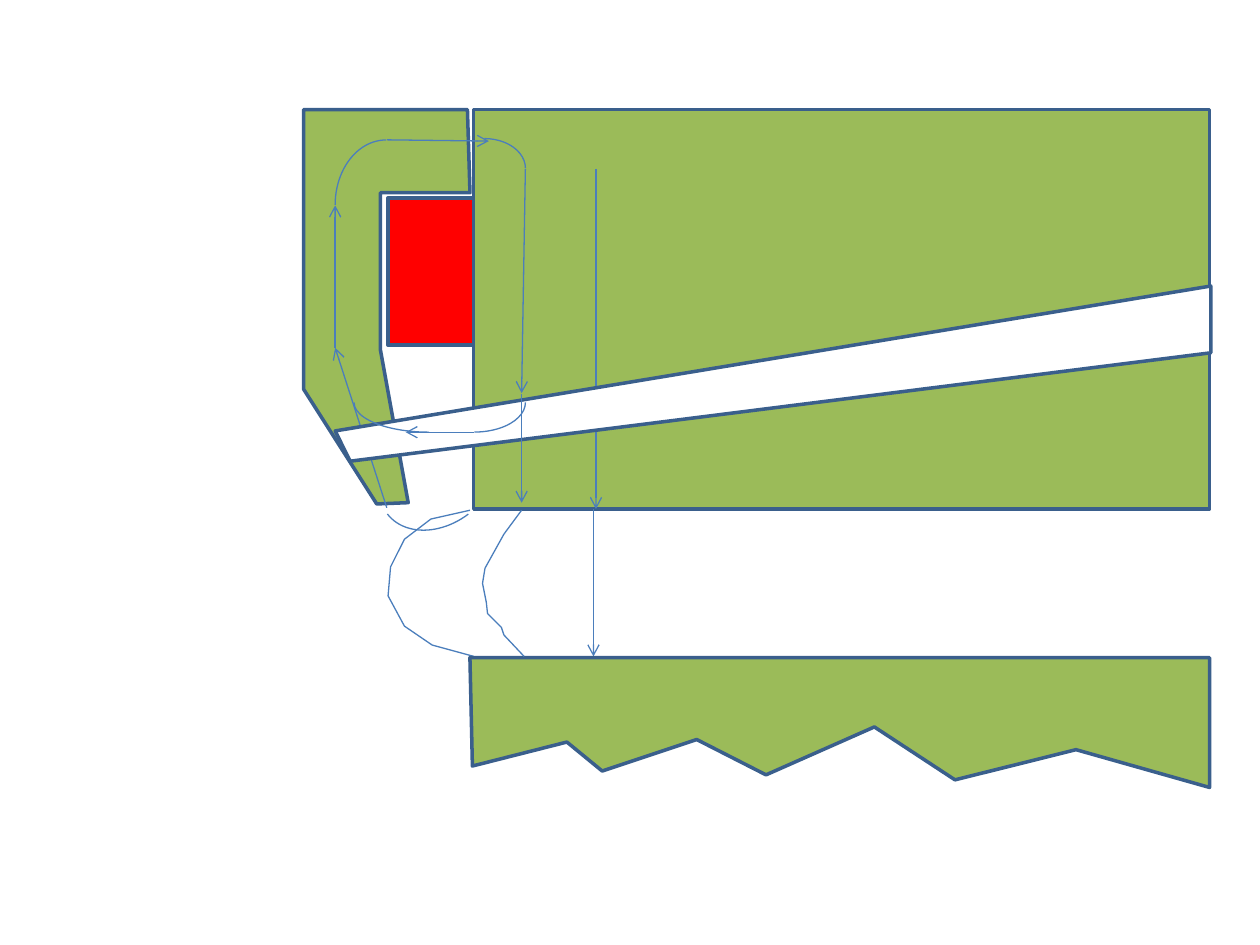
from lxml import etree
from pptx import Presentation, util as u
from pptx.dml.color import RGBColor
from pptx.enum import shapes as kinds
from pptx.oxml.ns import qn

deck = Presentation()
deck.slide_width, deck.slide_height = u.Inches(10), u.Inches(7.5)
CELL = deck.slide_width // 1000  # grid of 1000 columns by 750 rows
slide = deck.slides.add_slide(deck.slide_layouts[6])
canvas = slide.shapes

IRON, COIL, AIR = "9BBB59", "FF0000", "FFFFFF"
EDGE = {"color": "3A5F8C", "width": 2}
FLUX = {"color": "4B7EBC", "width": 0.75}


def paint(part, look, fill=None):
    """Outline a part, and fill it when a colour is given."""
    part.shadow.inherit = False
    part.line.color.rgb = RGBColor.from_string(look["color"])
    part.line.width = u.Pt(look["width"])
    if fill:
        part.fill.solid()
        part.fill.fore_color.rgb = RGBColor.from_string(fill)
    elif hasattr(part, "fill"):
        part.fill.background()


def outline(points, look, fill=None):
    """Draw a closed body when filled, otherwise an open line."""
    builder = canvas.build_freeform(*points[0], scale=CELL)
    builder.add_line_segments(points[1:], close=bool(fill))
    paint(builder.convert_to_shape(), look, fill)


# Iron parts
CORE_LEFT, GAP_TOP, RIGHT = 376, 404, 960
yoke = [(371, 87), (241, 87), (241, 309), (299, 400), (324, 399),
        (302, 278), (302, 153), (373, 153)]
plate = [(373, 522), (RIGHT, 522), (RIGHT, 625), (854, 595), (758, 619),
         (694, 577), (608, 615), (553, 587), (478, 612), (450, 589), (375, 608)]
slit = [(278, 366), (961, 280), (961, 227), (266, 342)]

# Fringe flux bulging out of the working gap
outer_fringe = [(373, 405), (342, 412), (321, 428), (310, 450), (308, 473),
                (321, 497), (343, 512), (376, 521)]
inner_fringe = [(414, 405), (400, 424), (385, 451), (383, 463), (386, 478),
                (387, 487), (398, 498), (400, 504), (416, 521)]

# Everything from back to front
RECT, ARC = kinds.MSO_SHAPE.RECTANGLE, kinds.MSO_SHAPE.ARC
stack = [
    ("preset", RECT, (CORE_LEFT, 87, RIGHT - CORE_LEFT, GAP_TOP - 87), 0, EDGE, IRON),
    ("preset", RECT, (308, 157, 68, 117), 0, EDGE, COIL),
    ("arrow", (473, 134, 473, GAP_TOP)),
    ("arrow", (471, GAP_TOP, 471, 521)),
    ("arrow", (417, 134, 414, 312)),
    ("outline", outer_fringe, FLUX),
    ("outline", yoke, EDGE, IRON),
    # Flux rising through the yoke
    ("preset", ARC, (297, 338, 102, 78), 142.7, FLUX, None),
    ("arrow", (307, 403, 266, 276)),
    ("arrow", (266, 276, 266, 163)),
    ("preset", ARC, (255, 122, 103, 81), 270, FLUX, None),
    # Flux crossing into the core
    ("arrow", (307, 111, 388, 112)),
    ("preset", ARC, (352, 110, 65, 47), 0, FLUX, None),
    ("outline", plate, EDGE, IRON),
    # Slit with the flux returning along it
    ("outline", slit, EDGE, AIR),
    ("arrow", (376, 343, 322, 343)),
    ("preset", ARC, (353, 279, 47, 81), 90, FLUX, None),
    ("preset", ARC, (281, 296, 119, 47), 180, FLUX, None),
    ("outline", inner_fringe, FLUX),
    ("arrow", (414, 313, 414, 399)),
]

for kind, *details in stack:
    if kind == "outline":
        outline(*details)
    elif kind == "preset":
        preset, box, turn, look, fill = details
        part = canvas.add_shape(preset, *(CELL * n for n in box))
        part.rotation = turn
        paint(part, look, fill)
    else:
        ends = [CELL * n for n in details[0]]
        arrow = canvas.add_connector(kinds.MSO_CONNECTOR.STRAIGHT, *ends)
        paint_line = arrow.line
        paint_line.color.rgb = RGBColor.from_string(FLUX["color"])
        paint_line.width = u.Pt(FLUX["width"])
        props = arrow._element.spPr
        etree.SubElement(props.find(qn("a:ln")), qn("a:tailEnd"), type="arrow")
        etree.SubElement(props, qn("a:effectLst"))

deck.save("out.pptx")
